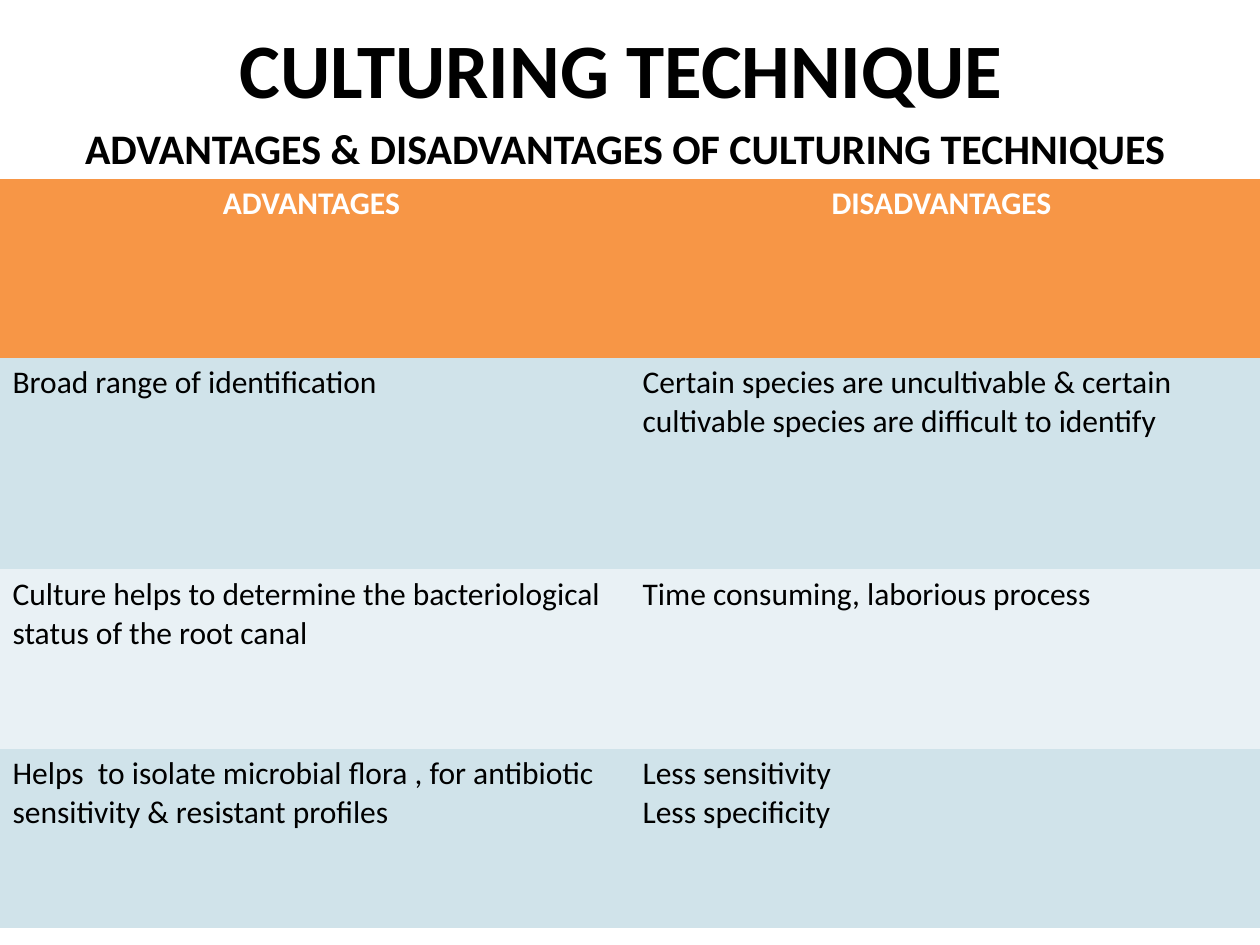
"""Build a slide comparing advantages and disadvantages of culturing techniques."""
from lxml import etree
from pptx import Presentation
from pptx.dml.color import RGBColor
from pptx.enum.text import MSO_ANCHOR, PP_ALIGN
from pptx.oxml.ns import qn
from pptx.util import Cm, Pt

CENTER, LEFT = PP_ALIGN.CENTER, PP_ALIGN.LEFT
MIDDLE, TOP = MSO_ANCHOR.MIDDLE, MSO_ANCHOR.TOP
BLACK = RGBColor(0x00, 0x00, 0x00)
WHITE = RGBColor(0xFF, 0xFF, 0xFF)
ORANGE = RGBColor(0xF7, 0x96, 0x46)
BLUE = RGBColor(0xD0, 0xE3, 0xEA)
PALE_BLUE = RGBColor(0xE9, 0xF1, 0xF5)
NO_GRID_STYLE = "{2D5ABB26-0587-4C30-8999-92F81FD0307C}"
ROWS = [
    ("ADVANTAGES ", "DISADVANTAGES "),
    ("Broad range of identification",
     "Certain species are uncultivable & certain cultivable species are difficult to identify"),
    ("Culture helps to determine the bacteriological status of the root canal",
     "Time consuming, laborious process"),
    ("Helps  to isolate microbial flora , for antibiotic sensitivity & resistant profiles",
     "Less sensitivity\nLess specificity"),
]
ROW_HEIGHTS = [Cm(3.61), Cm(4.27), Cm(3.61), Cm(3.61)]
ROW_FILLS = [ORANGE, BLUE, PALE_BLUE, BLUE]


def write_text(frame, text, size, color, bold, align):
    frame.text = text
    for para in frame.paragraphs:
        para.alignment = align
        for span in para.runs:
            span.font.name = "Calibri"
            span.font.size = Pt(size)
            span.font.bold = bold
            span.font.color.rgb = color


def place(shape, left, top, width, height):
    shape.left, shape.top, shape.width, shape.height = left, top, width, height


deck = Presentation()
deck.slide_width, deck.slide_height = Cm(25.4), Cm(19.05)
page = deck.slides.add_slide(deck.slide_layouts[1])

title = page.shapes.title
place(title, Cm(1.27), Cm(0), Cm(22.86), Cm(2.74))
title.text_frame.vertical_anchor = MIDDLE
write_text(title.text_frame, "CULTURING TECHNIQUE ", 44, BLACK, True, CENTER)

subtitle = page.placeholders[1]
place(subtitle, Cm(1.27), Cm(2.34), Cm(22.86), Cm(1.7))
subtitle.text_frame.vertical_anchor = TOP
write_text(subtitle.text_frame, "ADVANTAGES & DISADVANTAGES OF CULTURING TECHNIQUES ",
           24, BLACK, True, CENTER)
properties = subtitle.text_frame.paragraphs[0]._p.get_or_add_pPr()
properties.set("marL", str(Cm(0.95)))
properties.set("indent", str(-Cm(0.95)))
etree.SubElement(properties, qn("a:buNone"))

table = page.shapes.add_table(len(ROWS), 2, Cm(0), Cm(3.6), Cm(25.4), sum(ROW_HEIGHTS)).table
table._tbl.tblPr.find(qn("a:tableStyleId")).text = NO_GRID_STYLE
for row_index, texts in enumerate(ROWS):
    table.rows[row_index].height = ROW_HEIGHTS[row_index]
    is_header = row_index == 0
    for column_index, text in enumerate(texts):
        cell = table.cell(row_index, column_index)
        cell.fill.solid()
        cell.fill.fore_color.rgb = ROW_FILLS[row_index]
        write_text(cell.text_frame, text, 18, WHITE if is_header else BLACK,
                   is_header, CENTER if is_header else LEFT)

deck.save("out.pptx")
